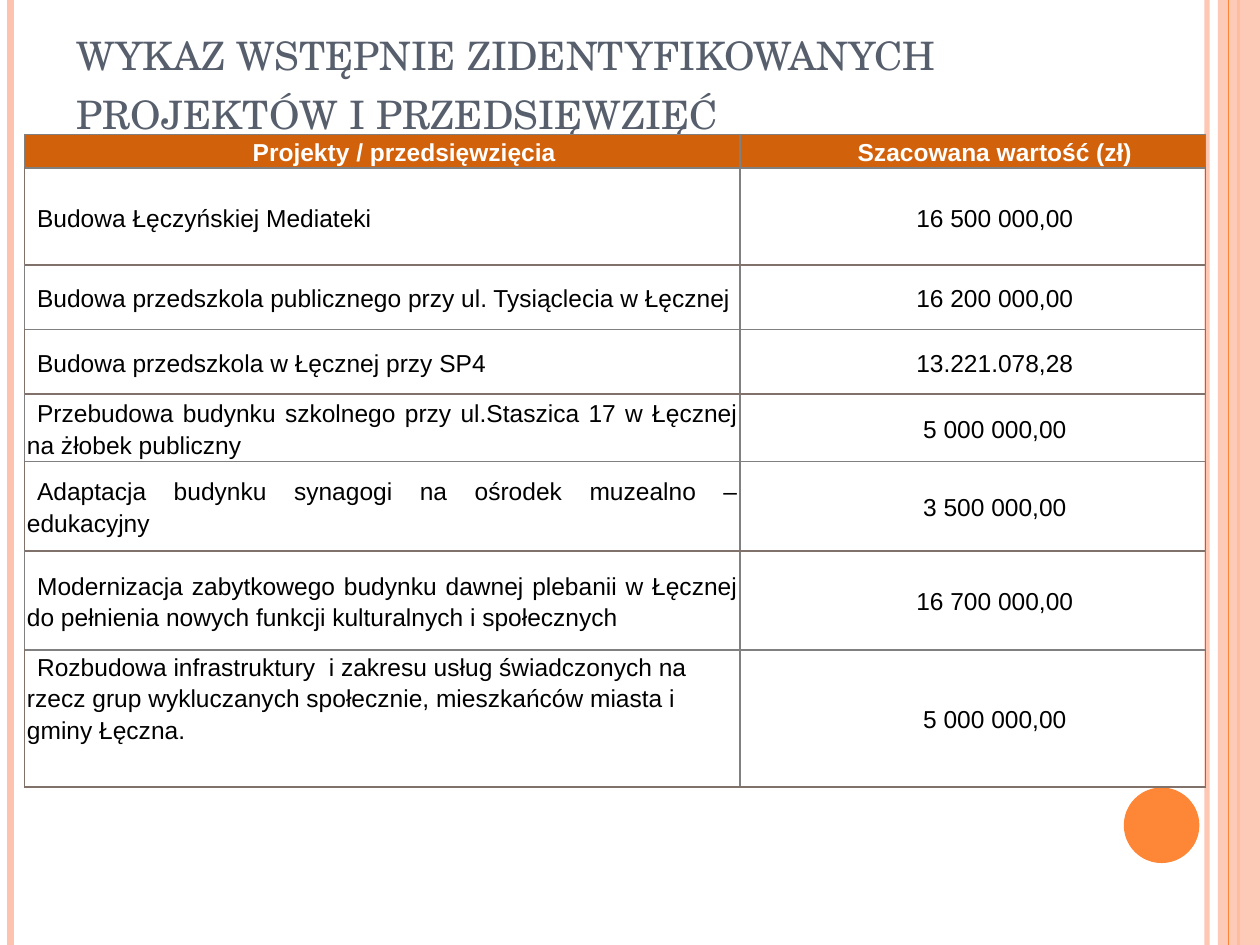
from dataclasses import dataclass

from lxml.etree import SubElement
from pptx import Presentation
from pptx.dml.color import RGBColor
from pptx.enum.shapes import MSO_CONNECTOR, MSO_SHAPE
from pptx.enum.text import MSO_ANCHOR, PP_ALIGN
from pptx.oxml.ns import qn
from pptx.util import Pt


@dataclass(frozen=True)
class Theme:
    peach: str = "FEC3AE"
    orange: str = "FE8637"
    head: str = "D2610C"
    title: str = "575F6D"
    grey: str = "808080"
    brown: str = "80716A"
    black: str = "000000"
    white: str = "FFFFFF"
    serif: str = "TeX Gyre Schola"
    sans: str = "Arial"
    big: int = 28
    small: int = 14


WIDE, HIGH = 720, 540
COLS = 409, 266
HEAD = "Projekty / przedsięwzięcia", "Szacowana wartość (zł)"
# name, value, row height
ROWS = [
    ("Budowa Łęczyńskiej Mediateki", "16 500 000,00", 55.4),
    ("Budowa przedszkola publicznego przy ul. Tysiąclecia w Łęcznej",
     "16 200 000,00", 36.8),
    ("Budowa przedszkola w Łęcznej przy SP4", "13.221.078,28", 36.8),
    ("Przebudowa budynku szkolnego przy ul.Staszica 17 w Łęcznej "
     "na żłobek publiczny", "5 000 000,00", 36.6),
    ("Adaptacja budynku synagogi na ośrodek muzealno – edukacyjny",
     "3 500 000,00", 51),
    ("Modernizacja zabytkowego budynku dawnej plebanii w Łęcznej "
     "do pełnienia nowych funkcji kulturalnych i społecznych",
     "16 700 000,00", 56.6),
    ("Rozbudowa infrastruktury  i zakresu usług świadczonych na rzecz grup "
     "wykluczanych społecznie, mieszkańców miasta i gminy Łęczna.",
     "5 000 000,00", 78.3),
]


class Deck:
    def __init__(self, theme):
        self.theme = theme
        self.show = Presentation()
        self.show.slide_width, self.show.slide_height = Pt(WIDE), Pt(HIGH)
        self.slide = self.show.slides.add_slide(self.show.slide_layouts[6])
        self.shapes = self.slide.shapes

    def fade(self, fill, alpha):
        """Set the opacity, in percent, of a solid fill element."""
        SubElement(fill[0], qn("a:alpha"), val=str(alpha * 1000))

    def rule(self, x, color, width, alpha=100):
        """Draw a vertical line over the full slide height."""
        line = self.shapes.add_connector(
            MSO_CONNECTOR.STRAIGHT, Pt(x), Pt(0), Pt(x), Pt(HIGH))
        line.line.color.rgb = RGBColor.from_string(color)
        line.line.width = Pt(width)
        props = line._element.spPr
        if alpha < 100:
            self.fade(props.find(qn("a:ln")).find(qn("a:solidFill")), alpha)
        SubElement(props, qn("a:effectLst"))

    def shape(self, kind, x, y, w, h, color, alpha=100):
        item = self.shapes.add_shape(kind, Pt(x), Pt(y), Pt(w), Pt(h))
        item.shadow.inherit = False
        item.fill.solid()
        item.fill.fore_color.rgb = RGBColor.from_string(color)
        item.line.fill.background()
        if alpha < 100:
            self.fade(item._element.spPr.find(qn("a:solidFill")), alpha)

    def style(self, para, face, size, color, bold=False):
        font = para.font
        font.name, font.size, font.bold = face, Pt(size), bold
        font.color.rgb = RGBColor.from_string(color)

    def title(self, text, x, y, w, h):
        frame = self.shapes.add_textbox(Pt(x), Pt(y), Pt(w), Pt(h)).text_frame
        frame.word_wrap = True
        frame.vertical_anchor = MSO_ANCHOR.BOTTOM
        para = frame.paragraphs[0]
        run = para.add_run()
        run.text = text
        run._r.get_or_add_rPr().set("cap", "small")
        self.style(para, self.theme.serif, self.theme.big, self.theme.title)

    def edge(self, cell, side, color):
        line = SubElement(cell._tc.get_or_add_tcPr(), qn(f"a:ln{side}"),
                          w=str(Pt(1)))
        fill = SubElement(line, qn("a:solidFill"))
        SubElement(fill, qn("a:srgbClr"), val=color)

    def cell(self, cell, text, row, col):
        theme = self.theme
        odd, head = row % 2 == 1, row == 0
        outer = theme.brown if odd else theme.grey
        top = theme.grey if odd or head else theme.brown
        self.edge(cell, "L", theme.grey if col else outer)
        self.edge(cell, "R", outer if col else theme.grey)
        self.edge(cell, "T", top)
        self.edge(cell, "B", outer)
        if head:
            cell.fill.solid()
            cell.fill.fore_color.rgb = RGBColor.from_string(theme.head)
        else:
            cell.fill.background()
        cell.margin_left = cell.margin_right = Pt(1.4)
        cell.margin_top = cell.margin_bottom = 0
        cell.vertical_anchor = MSO_ANCHOR.MIDDLE
        cell.text = text
        para = cell.text_frame.paragraphs[0]
        mid = head or col == 1
        para.alignment = PP_ALIGN.CENTER if mid else PP_ALIGN.JUSTIFY
        para.line_spacing = 1.15
        para._p.get_or_add_pPr().set("indent", str(Pt(25 if mid else 5.8)))
        self.style(para, theme.sans, theme.small,
                   theme.white if head else theme.black, head)

    def table(self, x, y, cols, rows):
        high = sum(row[-1] for row in rows)
        grid = self.shapes.add_table(
            len(rows), len(cols), Pt(x), Pt(y), Pt(sum(cols)), Pt(high)).table
        grid.first_row = grid.horz_banding = False
        for i, width in enumerate(cols):
            grid.columns[i].width = Pt(width)
        for i, (*texts, height) in enumerate(rows):
            grid.rows[i].height = Pt(height)
            for j, text in enumerate(texts):
                self.cell(grid.cell(i, j), text, i, j)
        return grid


def main():
    theme = Theme()
    deck = Deck(theme)
    deck.rule(689.8, theme.peach, 3, 93)
    deck.rule(6, theme.peach, 4.5)
    deck.rule(707.8, theme.orange, 1.5)
    deck.shape(MSO_SHAPE.RECTANGLE, 696, 0, 24, HIGH, theme.peach, 87)
    deck.rule(702, theme.orange, 0.75)
    deck.shape(MSO_SHAPE.OVAL, 642.2, 450, 43.2, 43.2, theme.orange)
    deck.title("wykaz wstępnie zidentyfikowanych projektów i przedsięwzięć",
               36.7, 15, 635, 68)
    grid = deck.table(14, 76.8, COLS, [(*HEAD, 18.6), *ROWS])
    last = grid.cell(len(ROWS), 0)
    last.vertical_anchor = MSO_ANCHOR.TOP
    last.text_frame.paragraphs[0].alignment = PP_ALIGN.LEFT
    deck.show.save("out.pptx")


if __name__ == "__main__":
    main()
